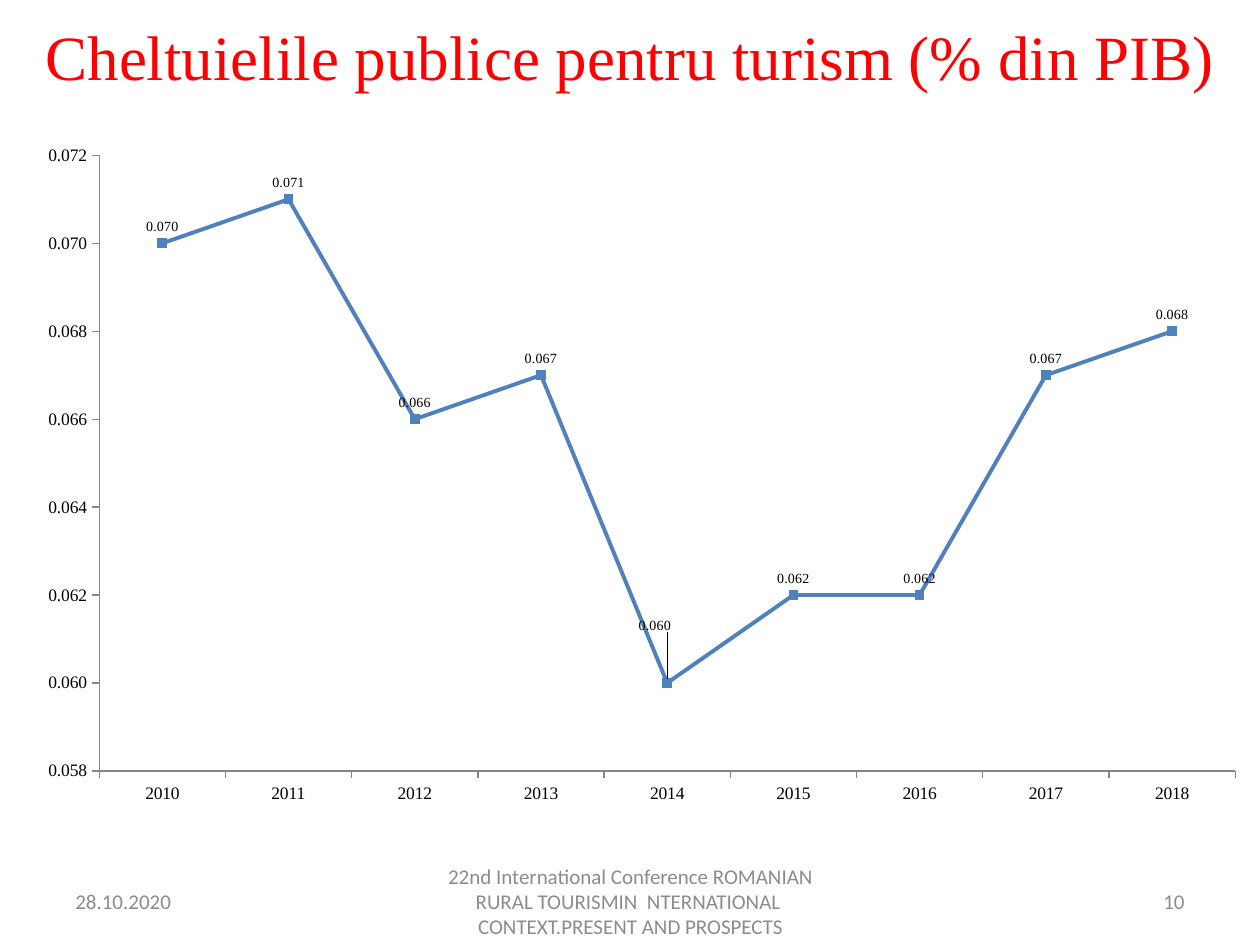
from dataclasses import dataclass

from lxml import etree
from pptx import Presentation
from pptx import util as u
from pptx.chart.data import CategoryChartData
from pptx.dml.color import RGBColor
from pptx.enum import chart as charts
from pptx.enum import text
from pptx.oxml.ns import qn


@dataclass(frozen=True)
class Theme:
    serif: str = "Times New Roman"
    sans: str = "Calibri"
    title_color: RGBColor = RGBColor(0xFF, 0, 0)
    footer_color: RGBColor = RGBColor(0x8C, 0x8C, 0x8C)
    ink: RGBColor = RGBColor(0, 0, 0)
    axis: RGBColor = RGBColor(0x86, 0x86, 0x86)
    series: RGBColor = RGBColor(0x4F, 0x81, 0xBD)
    title_size: int = 36
    footer_size: int = 12
    axis_size: int = 10
    label_size: int = 8


def manual_layout(**settings):
    layout = etree.Element(qn("c:layout"))
    manual = etree.SubElement(layout, qn("c:manualLayout"))
    for name, value in settings.items():
        etree.SubElement(manual, qn(f"c:{name}")).set("val", str(value))
    return layout


class SlideBuilder:
    def __init__(self, slide, theme):
        self.slide = slide
        self.theme = theme

    def style(self, font, name, size, color):
        font.name = name
        font.size = u.Pt(size)
        font.color.rgb = color

    def text_box(self, box, content, align, anchor, font_style):
        """Add one paragraph and return it for further spacing."""
        shape = self.slide.shapes.add_textbox(*map(u.Inches, box))
        frame = shape.text_frame
        frame.word_wrap = True
        frame.vertical_anchor = anchor
        paragraph = frame.paragraphs[0]
        paragraph.alignment = align
        run = paragraph.add_run()
        run.text = content
        self.style(run.font, *font_style)
        return paragraph

    def title(self, content):
        theme = self.theme
        paragraph = self.text_box(
            (0, 0, 10, 1.26), content, text.PP_ALIGN.CENTER, text.MSO_ANCHOR.TOP,
            (theme.serif, theme.title_size, theme.title_color))
        paragraph.line_spacing = 1.15
        paragraph.space_after = u.Pt(10)

    def footer(self, left, width, content, align):
        theme = self.theme
        self.text_box(
            (left, 6.95, width, 0.4), content, align, text.MSO_ANCHOR.MIDDLE,
            (theme.sans, theme.footer_size, theme.footer_color))

    def style_axis(self, axis):
        theme = self.theme
        axis.has_major_gridlines = False
        axis.major_tick_mark = charts.XL_TICK_MARK.OUTSIDE
        axis.format.line.color.rgb = theme.axis
        self.style(axis.tick_labels.font, theme.serif, theme.axis_size, theme.ink)

    def line_chart(self, box, categories, values):
        theme = self.theme
        data = CategoryChartData(number_format="0.000")
        data.categories = categories
        data.add_series("Series 1", values)
        chart = self.slide.shapes.add_chart(
            charts.XL_CHART_TYPE.LINE_MARKERS, *map(u.Inches, box), data).chart
        chart.has_legend = False
        chart.has_title = False
        self.style(chart.font, theme.sans, theme.axis_size, theme.ink)

        self.style_axis(chart.category_axis)
        value_axis = chart.value_axis
        self.style_axis(value_axis)
        value_axis.minimum_scale = 0.058
        value_axis.maximum_scale = 0.072
        value_axis.major_unit = 0.002
        value_axis.tick_labels.number_format = "0.000"
        value_axis.tick_labels.number_format_is_linked = False

        plot = chart.plots[0]
        plot.vary_by_categories = False
        series = plot.series[0]
        series.smooth = False
        series.format.line.color.rgb = theme.series
        series.format.line.width = u.Pt(2.25)
        marker = series.marker
        marker.style = charts.XL_MARKER_STYLE.SQUARE
        marker.size = 5
        marker.format.fill.solid()
        marker.format.fill.fore_color.rgb = theme.series
        marker.format.line.color.rgb = theme.series

        labels = series.data_labels
        labels.show_value = True
        labels.number_format = "0.000"
        labels.number_format_is_linked = False
        labels.position = charts.XL_LABEL_POSITION.ABOVE
        self.style(labels.font, theme.serif, theme.label_size, theme.ink)

        self.place_plot(chart, x=0.06, y=0.03, w=0.92, h=0.9)
        return series

    def place_plot(self, chart, **fractions):
        area = chart.element.find(f".//{qn('c:plotArea')}")
        for layout in area.findall(qn("c:layout")):
            area.remove(layout)
        area.insert(0, manual_layout(
            layoutTarget="inner", xMode="edge", yMode="edge", **fractions))

    def shift_label(self, series, index, x, y):
        """Move one point's label by fractions of the chart size."""
        theme = self.theme
        label = series.points[index].data_label
        label.position = charts.XL_LABEL_POSITION.ABOVE
        self.style(label.font, theme.serif, theme.label_size, theme.ink)
        element = series.data_labels._element.find(qn("c:dLbl"))
        element.insert(1, manual_layout(x=x, y=y))


def main():
    presentation = Presentation()
    presentation.slide_width = u.Inches(10)
    presentation.slide_height = u.Inches(7.5)
    slide = presentation.slides.add_slide(presentation.slide_layouts[6])
    builder = SlideBuilder(slide, Theme())

    align = text.PP_ALIGN
    builder.footer(7.17, 2.33, "10", align.RIGHT)
    builder.footer(0.5, 2.33, "28.10.2020", align.LEFT)
    builder.footer(
        3.42, 3.17,
        "22nd International Conference ROMANIAN RURAL TOURISMIN  NTERNATIONAL  "
        "CONTEXT.PRESENT AND PROSPECTS", align.CENTER)
    builder.title("Cheltuielile publice pentru turism (% din PIB)")

    years = [str(year) for year in range(2010, 2019)]
    spending = [0.070, 0.071, 0.066, 0.067, 0.060, 0.062, 0.062, 0.067, 0.068]
    series = builder.line_chart((0.2, 1.07, 9.8, 5.43), years, spending)
    builder.shift_label(series, years.index("2014"), x=-0.01, y=-0.06)

    presentation.save("out.pptx")


if __name__ == "__main__":
    main()
